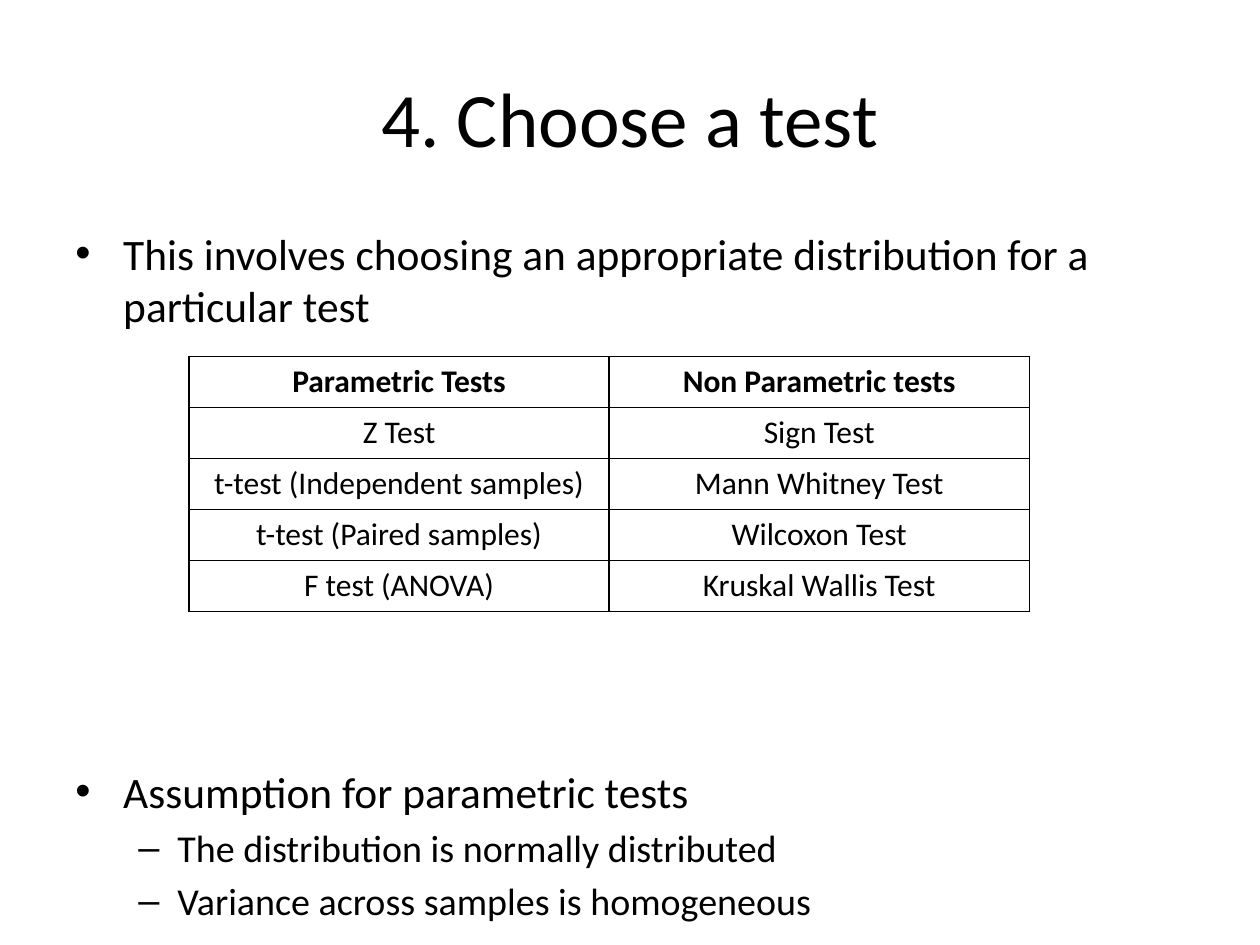
import pptx
import pptx.dml.color
import pptx.enum.text
import pptx.oxml
import pptx.oxml.ns
import pptx.util
from pptx.util import Inches

FONT = "Calibri"
COLORS = {"text": "000000", "border": "000000", "background": "FFFFFF"}
ALIGN = pptx.enum.text.PP_ALIGN
ANCHOR = pptx.enum.text.MSO_ANCHOR

TEST_ROWS = [
    ("Parametric Tests", "Non Parametric tests"),
    ("Z Test", "Sign Test"),
    ("t-test (Independent samples)", "Mann Whitney Test"),
    ("t-test (Paired samples)", "Wilcoxon Test"),
    ("F test (ANOVA)", "Kruskal Wallis Test"),
]

BULLET_LEVELS = [
    {"symbol": "•", "size": 24.8, "margin": 0.38, "hanging": 0.38},
    {"symbol": "–", "size": 21.7, "margin": 0.81, "hanging": 0.31},
]

BODY_ITEMS = [
    (0, "This involves choosing an appropriate distribution for a particular test", 0),
    (0, "Assumption for parametric tests", 248),
    (1, "The distribution is normally distributed", 4.3),
    (1, "Variance across samples is homogeneous", 4.3),
]


def color(name):
    return pptx.dml.color.RGBColor.from_string(COLORS[name])


def add_element(parent, xml):
    namespaces = pptx.oxml.ns.nsdecls("a")
    element = pptx.oxml.parse_xml(xml.replace("@", namespaces, 1))
    parent.append(element)


def add_run(paragraph, text, size, bold=False):
    run = paragraph.add_run()
    run.text = text
    run.font.name = FONT
    run.font.size = pptx.util.Pt(size)
    run.font.bold = bold
    run.font.color.rgb = color("text")


def add_text_frame(slide, left, top, width, height, anchor):
    box = slide.shapes.add_textbox(Inches(left), Inches(top), Inches(width), Inches(height))
    box.text_frame.word_wrap = True
    box.text_frame.vertical_anchor = anchor
    return box.text_frame


def add_title(slide, text):
    paragraph = add_text_frame(slide, 0.5, 0.3, 9, 1.25, ANCHOR.MIDDLE).paragraphs[0]
    paragraph.alignment = ALIGN.CENTER
    add_run(paragraph, text, 44)


def add_bullet(paragraph, level, text, space_before):
    style = BULLET_LEVELS[level]
    paragraph.level = level
    paragraph.space_before = pptx.util.Pt(space_before)
    properties = paragraph._p.get_or_add_pPr()
    properties.set("marL", str(Inches(style["margin"])))
    properties.set("indent", str(-Inches(style["hanging"])))
    add_element(properties, '<a:buFont @ typeface="Arial"/>')
    add_element(properties, f'<a:buChar @ char="{style["symbol"]}"/>')
    add_run(paragraph, text, style["size"])


def add_body(slide, items):
    frame = add_text_frame(slide, 0.5, 1.75, 9, 4.95, ANCHOR.TOP)
    for index, (level, text, space_before) in enumerate(items):
        paragraph = frame.add_paragraph() if index else frame.paragraphs[0]
        add_bullet(paragraph, level, text, space_before)


def style_cell(cell):
    properties = cell._tc.get_or_add_tcPr()
    for side in ("lnL", "lnR", "lnT", "lnB"):
        add_element(
            properties,
            f'<a:{side} @ w="{pptx.util.Pt(1)}"><a:solidFill>'
            f'<a:srgbClr val="{COLORS["border"]}"/></a:solidFill></a:{side}>',
        )
    cell.fill.background()


def add_test_table(slide, rows):
    row_height = 0.405
    table = slide.shapes.add_table(
        len(rows), len(rows[0]), Inches(1.5), Inches(2.83),
        Inches(6.67), Inches(row_height * len(rows)),
    ).table
    table.horz_banding = False
    for row_index, texts in enumerate(rows):
        for column_index, text in enumerate(texts):
            cell = table.cell(row_index, column_index)
            style_cell(cell)
            paragraph = cell.text_frame.paragraphs[0]
            paragraph.alignment = ALIGN.CENTER
            add_run(paragraph, text, 18, bold=row_index == 0)


def main():
    presentation = pptx.Presentation()
    presentation.slide_width = Inches(10)
    presentation.slide_height = Inches(7.5)
    slide = presentation.slides.add_slide(presentation.slide_layouts[6])
    slide.background.fill.solid()
    slide.background.fill.fore_color.rgb = color("background")
    add_title(slide, "4. Choose a test")
    add_body(slide, BODY_ITEMS)
    add_test_table(slide, TEST_ROWS)
    presentation.save("out.pptx")


if __name__ == "__main__":
    main()
